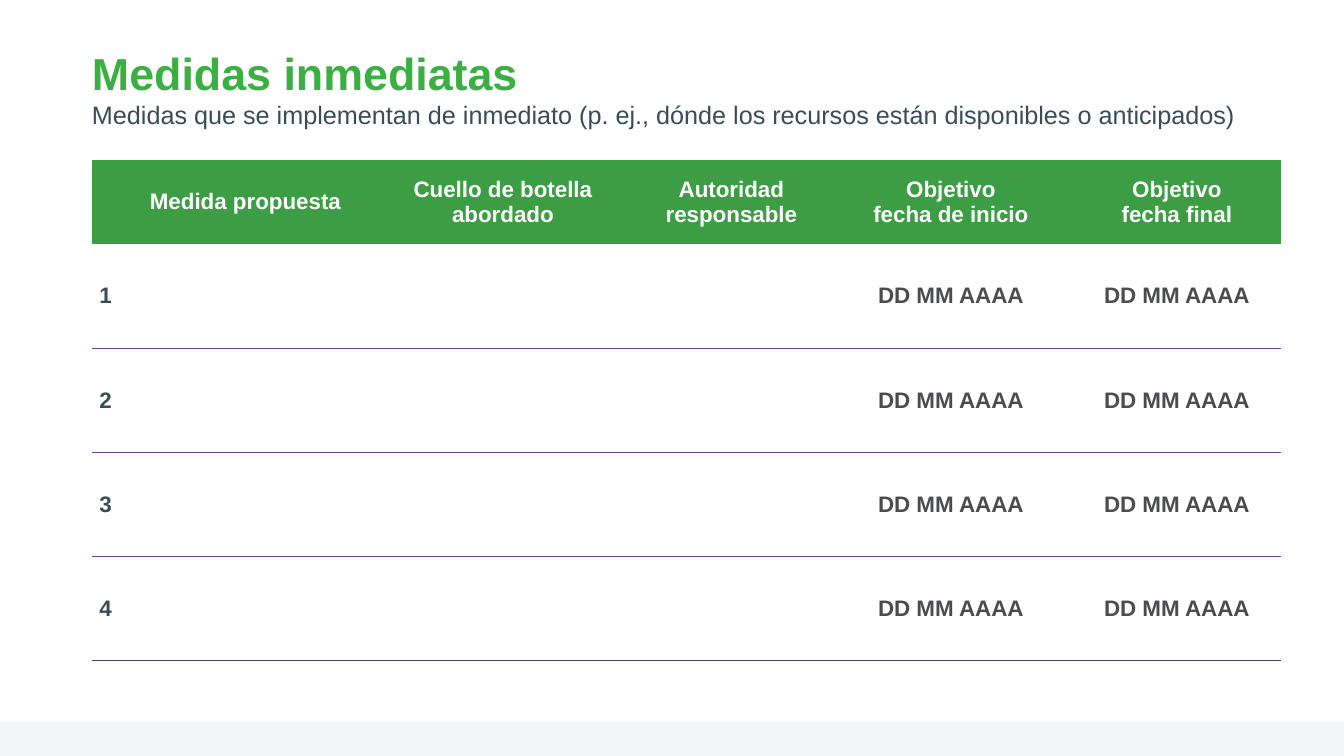
from lxml import etree
from pptx import Presentation
from pptx.dml.color import RGBColor
from pptx.enum.shapes import MSO_SHAPE
from pptx.enum.text import MSO_ANCHOR, PP_ALIGN
from pptx.oxml.ns import qn
from pptx.util import Pt

RECTANGLE = MSO_SHAPE.RECTANGLE
TOP, MIDDLE = MSO_ANCHOR.TOP, MSO_ANCHOR.MIDDLE
CENTER = PP_ALIGN.CENTER

TITLE_GREEN = RGBColor(0x3B, 0xB0, 0x42)
HEADER_GREEN = RGBColor(0x3C, 0x9D, 0x45)
SLATE = RGBColor(0x38, 0x4D, 0x56)
DATE_GRAY = RGBColor(0x4B, 0x4C, 0x4F)
PURPLE = RGBColor(0x6C, 0x44, 0x92)
FOOTER_GRAY = RGBColor(0xF2, 0xF6, 0xF7)
WHITE = RGBColor(0xFF, 0xFF, 0xFF)
FONT = "Arial"
NO_STYLE = "{2D5ABB26-0587-4C30-8999-92F81FD0307C}"

HEADING = [
    ("Medidas inmediatas", 32, True, TITLE_GREEN),
    ("Medidas que se implementan de inmediato (p. ej., dónde los recursos "
     "están disponibles o anticipados)", 18, False, SLATE),
]
COLUMNS = [
    ("", 27),
    ("Medida propuesta", 253),
    ("Cuello de botella abordado", 262),
    ("Autoridad responsable", 195),
    ("Objetivo\nfecha de inicio", 244),
    ("Objetivo\nfecha final", 208),
]
DATE = "DD MM AAAA"
MEASURES = [(str(number), "", "", "", DATE, DATE) for number in range(1, 5)]

SLIDE_W, SLIDE_H = 1344, 756
LEFT = 92
TABLE_TOP, TABLE_H, HEADER_H = 160, 501, 84
FOOTER_TOP = 722


def px(length):
    return round(length * 914400 / 100.8)


def fill_cell(cell, text, color, side, vertical):
    cell.vertical_anchor = MIDDLE
    cell.margin_left = cell.margin_right = px(side)
    cell.margin_top = cell.margin_bottom = px(vertical)
    cell.text = text
    for paragraph in cell.text_frame.paragraphs:
        paragraph.alignment = CENTER
        paragraph.font.name = FONT
        paragraph.font.size = Pt(16)
        paragraph.font.bold = True
        paragraph.font.color.rgb = color


def add_border(cell, edge, color):
    properties = cell._tc.get_or_add_tcPr()
    line = etree.Element(qn("a:" + edge), w=str(Pt(1)))
    solid = etree.SubElement(line, qn("a:solidFill"))
    etree.SubElement(solid, qn("a:srgbClr"), val=str(color))
    properties.insert(0, line)


def add_heading(slide):
    heading = slide.shapes.add_textbox(px(LEFT), px(40), px(1188), px(120))
    frame = heading.text_frame
    frame.word_wrap = True
    frame.vertical_anchor = TOP
    frame.margin_left = frame.margin_right = frame.margin_bottom = 0
    frame.margin_top = px(6)
    paragraph = frame.paragraphs[0]
    for index, (text, size, bold, color) in enumerate(HEADING):
        if index:
            paragraph.add_line_break()
        run = paragraph.add_run()
        run.text = text
        run.font.name = FONT
        run.font.size = Pt(size)
        run.font.bold = bold
        run.font.color.rgb = color


def add_measures(slide):
    widths = [width for _, width in COLUMNS]
    frame = slide.shapes.add_table(
        len(MEASURES) + 1, len(COLUMNS),
        px(LEFT), px(TABLE_TOP), px(sum(widths)), px(TABLE_H))
    table = frame.table
    table.first_row = table.horz_banding = False
    table._tbl.tblPr.find(qn("a:tableStyleId")).text = NO_STYLE

    table.rows[0].height = px(HEADER_H)
    for column, (label, width) in enumerate(COLUMNS):
        table.columns[column].width = px(width)
        cell = table.cell(0, column)
        fill_cell(cell, label, WHITE, 7, 0)
        cell.fill.solid()
        cell.fill.fore_color.rgb = HEADER_GREEN

    for row, measure in enumerate(MEASURES, 1):
        table.rows[row].height = px((TABLE_H - HEADER_H) / len(MEASURES))
        last = row == len(MEASURES)
        for column, text in enumerate(measure):
            cell = table.cell(row, column)
            fill_cell(cell, text, DATE_GRAY if column else SLATE, 5, 5)
            cell.fill.background()
            add_border(cell, "lnB", SLATE if last else PURPLE)
            if row > 1:
                add_border(cell, "lnT", PURPLE)


def main():
    deck = Presentation()
    deck.slide_width, deck.slide_height = px(SLIDE_W), px(SLIDE_H)
    slide = deck.slides.add_slide(deck.slide_layouts[6])

    footer = slide.shapes.add_shape(
        RECTANGLE, 0, px(FOOTER_TOP), px(SLIDE_W), px(SLIDE_H - FOOTER_TOP))
    footer.shadow.inherit = False
    footer.fill.solid()
    footer.fill.fore_color.rgb = FOOTER_GRAY
    footer.line.fill.background()

    add_heading(slide)
    add_measures(slide)
    deck.save("out.pptx")


if __name__ == "__main__":
    main()
